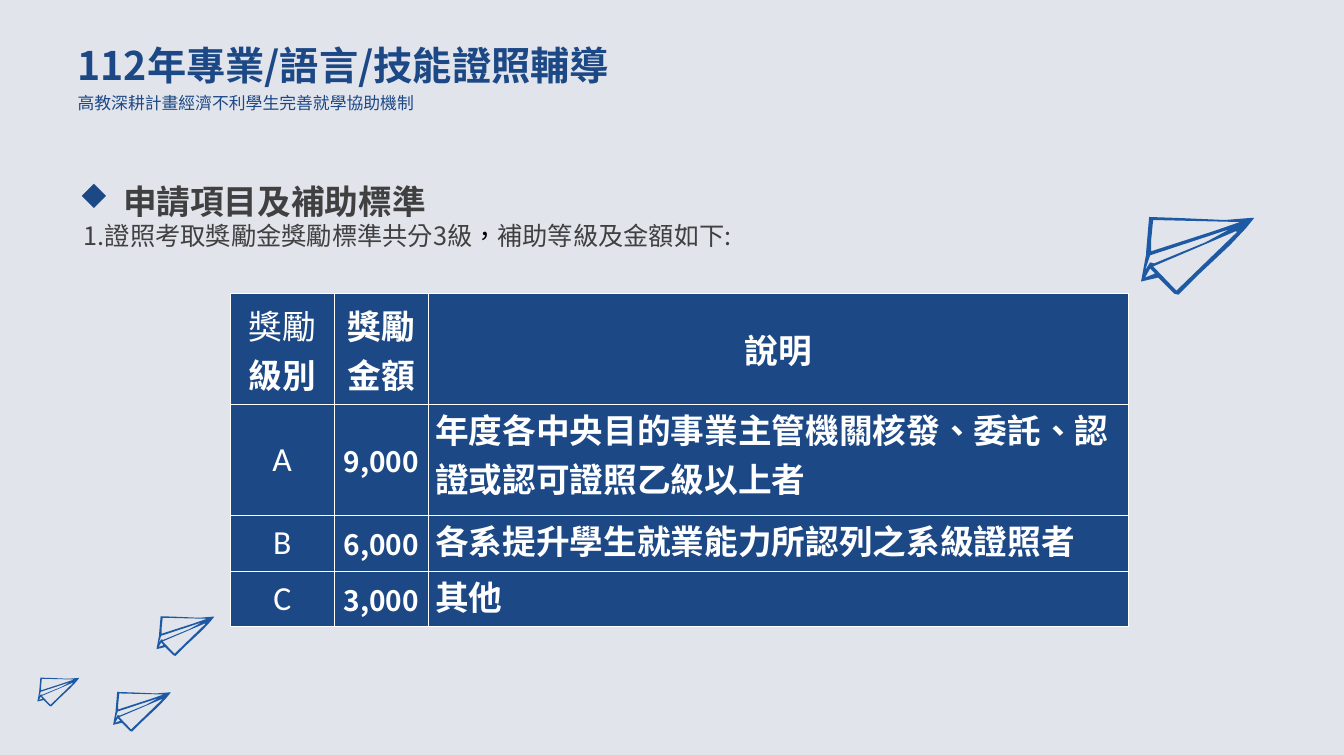
from lxml.etree import SubElement as Sub
from pptx import Presentation
from pptx.dml.color import RGBColor as RGB
from pptx.enum.shapes import MSO_SHAPE as Form
from pptx.enum.text import MSO_ANCHOR as Anchor, MSO_AUTO_SIZE as Fit, PP_ALIGN as Align
from pptx.oxml.ns import qn
from pptx.util import Inches, Pt

NAVY, BLUE, GREY, BLACK, WHITE, PALE = "1C4885", "1E5AA4", "404040", "000000", "FFFFFF", "E2E4EC"
NOTO, LATIN = "Noto Sans CJK SC", "Calibri"

TITLE = {"size": Pt(28), "name": NOTO, "bold": True}
SUB = {"size": Pt(12), "name": NOTO, "bold": False}
HEAD = {"size": Pt(24), "name": NOTO, "bold": True}
LIGHT = HEAD | {"bold": False}
ITEM = {"size": Pt(18), "name": NOTO, "bold": False}
MARK = ITEM | {"name": LATIN}
GRADE = {"size": Pt(24), "name": LATIN, "bold": False}
PAUSE = HEAD | {"name": LATIN}
MONEY = HEAD | {"size": Pt(20)}

COLS = [1.03, 0.93, 6.94]
ROWS = [1.1, 1.1, 0.55, 0.55]
AWARDS = [
    ("A", "9,000", [("年度各中央目的事業主管機關核發", HEAD), ("、", PAUSE), ("委託", HEAD),
                    ("、", PAUSE), ("認證或認可證照乙級以上者", HEAD)]),
    ("B", "6,000", [("各系提升學生就業能力所認列之系級證照者", HEAD)]),
    ("C", "3,000", [("其他", HEAD)]),
]

FOLDS = [
    [(112, 2), (104, 12), (88, 29), (56, 59), (37, 78), (33, 77), (17, 61), (0, 65),
     (5, 38), (5, 36), (8, 1), (37, 2), (83, 4), (108, 2)],
    [(12, 4), (10, 24), (10, 35), (72, 15), (98, 6)],
    [(12, 50), (35, 74), (95, 16), (94, 15)],
    [(9, 39), (4, 54), (9, 46), (13, 47), (64, 26), (88, 13)],
    [(4, 61), (14, 57), (9, 52)],
]
PLANES = [(11.3, 2.14, 1), (1.55, 6.1, 0.51), (0.37, 6.71, 0.37), (1.12, 6.85, 0.51)]


def paint(fill, tone):
    """Give a fill one solid colour."""
    fill.solid()
    fill.fore_color.rgb = RGB.from_string(tone)


def apply(item, form):
    """Set each format value on an item."""
    for key, value in form.items():
        setattr(item, key, value)


def write(frame, runs, **form):
    """Write (text, font values, colour) runs as one paragraph."""
    para = frame.paragraphs[0]
    apply(para, form)
    for text, style, tone in runs:
        run = para.add_run()
        run.text = text
        apply(run.font, style)
        run.font.color.rgb = RGB.from_string(tone)
        props = run.font._element
        props.set("lang", "zh-TW")
        Sub(props, qn("a:ea"), typeface=style["name"])


def place(shape, box, runs, **form):
    """Move a text shape into its box and fill it."""
    for side, value in zip(("left", "top", "width", "height"), box):
        setattr(shape, side, Inches(value))
    frame = shape.text_frame
    apply(frame, {"word_wrap": True, "auto_size": Fit.NONE, "vertical_anchor": Anchor.TOP})
    write(frame, runs, alignment=Align.LEFT, space_before=Pt(0), **form)


def label(slide, box, runs, **form):
    """Add a text box."""
    place(slide.shapes.add_textbox(0, 0, 0, 0), box, runs, **form)


def plain(shape):
    """Remove the bullet and indent of a placeholder paragraph."""
    props = shape.text_frame.paragraphs[0]._p.get_or_add_pPr()
    props.set("marL", "0")
    props.set("indent", "0")
    Sub(props, qn("a:buNone"))


def finish(shape, tone):
    """Fill a shape without line or shadow."""
    shape.shadow.inherit = False
    paint(shape.fill, tone)
    shape.line.fill.background()


def plane(slide, left, top, size):
    """Draw a paper plane from its folds."""
    pen = slide.shapes.build_freeform(*FOLDS[0][0], scale=Inches(size) / 100)
    pen.add_line_segments(FOLDS[0][1:], close=True)
    for fold in FOLDS[1:]:
        pen.move_to(*fold[0])
        pen.add_line_segments(fold[1:], close=True)
    finish(pen.convert_to_shape(Inches(left), Inches(top)), BLUE)


def edge(cell):
    """Draw thin white borders round a cell."""
    props = cell._tc.get_or_add_tcPr()
    for side in "LRTB":
        line = Sub(props, qn(f"a:ln{side}"), w=str(Pt(1)))
        Sub(Sub(line, qn("a:solidFill")), qn("a:srgbClr"), val=WHITE)


def cell_text(cell, runs, mid):
    """Format one table cell and write its text."""
    edge(cell)
    paint(cell.fill, NAVY)
    apply(cell, {"margin_left": Inches(0.07), "margin_right": Inches(0.07),
                 "margin_top": 0, "margin_bottom": 0,
                 "vertical_anchor": Anchor.MIDDLE if mid else Anchor.TOP})
    write(cell.text_frame, [(*run, WHITE) for run in runs],
          alignment=Align.CENTER if mid else Align.LEFT)


def grid(slide):
    """Add the award table."""
    table = slide.shapes.add_table(len(ROWS), len(COLS), Inches(2.28), Inches(2.91),
                                   Inches(sum(COLS)), Inches(sum(ROWS))).table
    for col, width in zip(table.columns, COLS):
        col.width = Inches(width)
    for row, height in zip(table.rows, ROWS):
        row.height = Inches(height)
    data = [[[("獎勵", LIGHT), ("級別", HEAD)], [("獎勵金額", HEAD)], [("說明", HEAD)]]]
    data += [[[(grade, GRADE)], [(money, MONEY)], note] for grade, money, note in AWARDS]
    for y, row in enumerate(data):
        for x, runs in enumerate(row):
            cell_text(table.cell(y, x), runs, y == 0 or x < 2)


def main():
    """Build the slide and save it."""
    deck = Presentation()
    deck.slide_width, deck.slide_height = Inches(13.31), Inches(7.48)
    slide = deck.slides.add_slide(deck.slide_layouts[1])
    paint(slide.background.fill, PALE)
    title, body = slide.placeholders
    place(title, (0.67, 0.36, 7.09, 0.57), [("112年專業/語言/技能證照輔導", TITLE, NAVY)])
    label(slide, (0.67, 0.77, 5.78, 0.37),
          [("高教深耕計畫經濟不利學生完善就學協助機制", SUB, NAVY)], line_spacing=1.5)
    place(body, (0.73, 2.13, 7.42, 0.4),
          [("1.證照考取獎勵金獎勵標準共分3級", ITEM, GREY), ("，", MARK, BLACK),
           ("補助等級及金額如下:", ITEM, GREY)])
    plain(body)
    label(slide, (1.12, 1.54, 5.33, 0.71),
          [("申請項目及補助標準", HEAD, GREY)], line_spacing=1.5)
    mark = slide.shapes.add_shape(Form.DIAMOND, Inches(0.81), Inches(1.82),
                                  Inches(0.24), Inches(0.24))
    finish(mark, NAVY)
    grid(slide)
    for spot in PLANES:
        plane(slide, *spot)
    deck.save("out.pptx")


if __name__ == "__main__":
    main()
